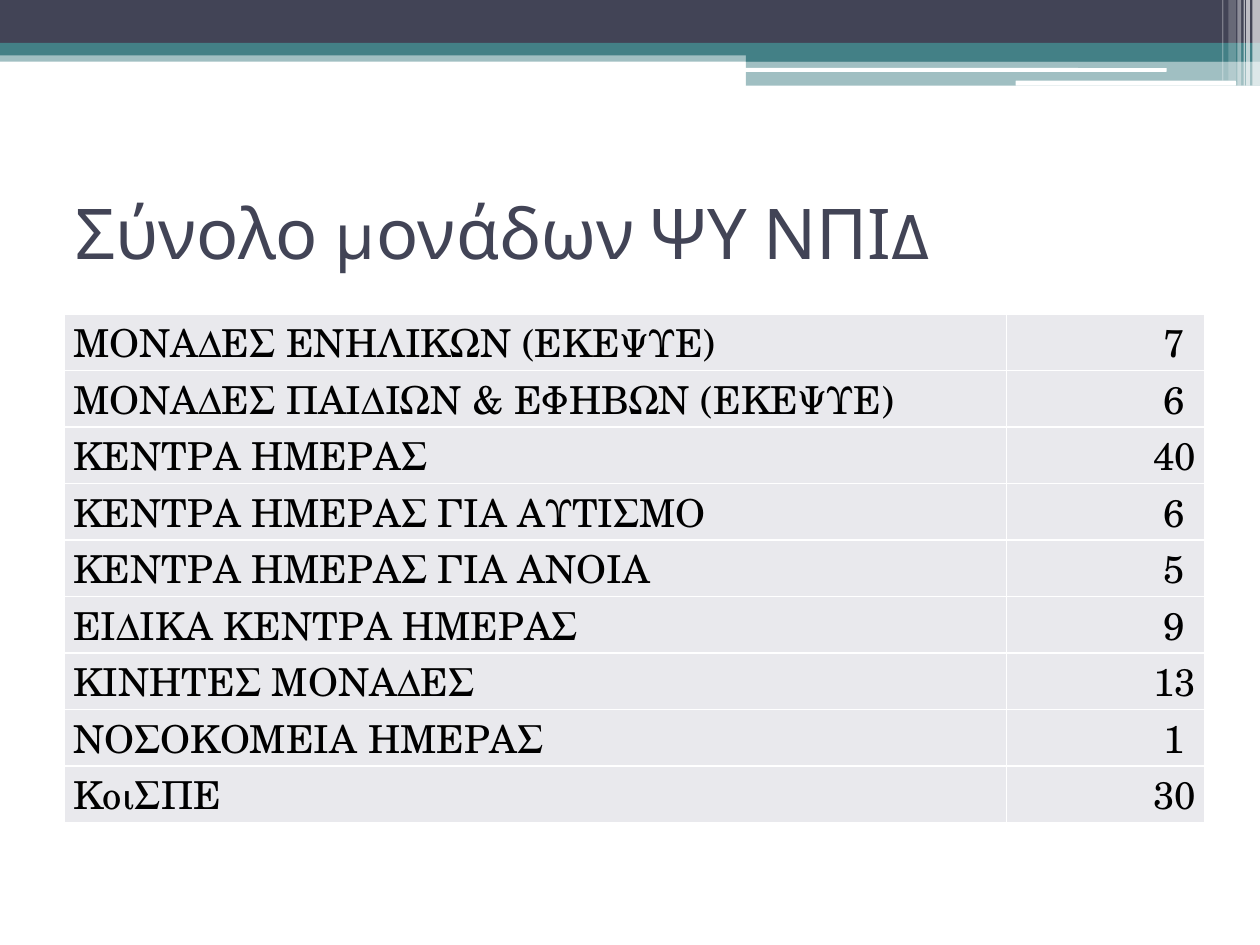
from typing import NamedTuple

from lxml import etree
from pptx import Presentation
from pptx.dml.color import RGBColor
from pptx.enum import shapes, text
from pptx.oxml import ns
from pptx.util import Inches, Pt

NAVY, TEAL, WHITE, BLACK, PALE = "424456", "438086", "FFFFFF", "000000", "E9E9ED"
TITLE_FONT, TABLE_FONT = "Karla", "TeX Gyre Schola"


class Band(NamedTuple):
    left: float
    top: float
    width: float
    height: float
    color: str
    opacity: int = 100
    rounded: bool = False


class Unit(NamedTuple):
    name: str
    count: str


BANDS = [
    Band(0, 0.4, 10, 0.09, TEAL, 50),
    Band(0, 0, 10, 0.34, NAVY),
    Band(0, 0.34, 10, 0.1, TEAL),
    Band(5.92, 0.39, 4.08, 0.1, TEAL),
    Band(5.92, 0.48, 4.08, 0.2, TEAL, 50),
    Band(5.91, 0.54, 3.35, 0.03, WHITE, rounded=True),
    Band(8.06, 0.64, 1.75, 0.04, WHITE, rounded=True),
    # Translucent stripes at the right edge
    Band(9.94, 0, 0.06, 0.68, WHITE, 65),
    Band(9.89, 0, 0.03, 0.68, WHITE, 65),
    Band(9.87, 0, 0.01, 0.68, WHITE, 60),
    Band(9.82, 0, 0.03, 0.68, WHITE, 40),
    Band(9.75, 0, 0.06, 0.64, WHITE, 20),
    Band(9.7, 0, 0.01, 0.64, WHITE, 30),
]

UNITS = [
    Unit("ΜΟΝΑΔΕΣ ΕΝΗΛΙΚΩΝ (ΕΚΕΨΥΕ)", "7 "),
    Unit("ΜΟΝΑΔΕΣ ΠΑΙΔΙΩΝ & ΕΦΗΒΩΝ (ΕΚΕΨΥΕ)", "6 "),
    Unit("ΚΕΝΤΡΑ ΗΜΕΡΑΣ", "40"),
    Unit("ΚΕΝΤΡΑ ΗΜΕΡΑΣ ΓΙΑ ΑΥΤΙΣΜΟ", "6 "),
    Unit("ΚΕΝΤΡΑ ΗΜΕΡΑΣ ΓΙΑ ΑΝΟΙΑ", "5 "),
    Unit("ΕΙΔΙΚΑ ΚΕΝΤΡΑ ΗΜΕΡΑΣ", "9 "),
    Unit("ΚΙΝΗΤΕΣ ΜΟΝΑΔΕΣ", "13"),
    Unit("ΝΟΣΟΚΟΜΕΙΑ ΗΜΕΡΑΣ", "1 "),
    Unit("ΚοιΣΠΕ", "30"),
]


def set_fill(target, color: str, opacity: int = 100) -> None:
    target.fill.solid()
    target.fill.fore_color.rgb = RGBColor.from_string(color)
    if opacity < 100:
        for rgb in target._element.spPr.iter(ns.qn("a:srgbClr")):
            etree.SubElement(rgb, ns.qn("a:alpha"), val=str(opacity * 1000))


def write(frame, words: str, *, size: float, font: str, color: str,
          align=text.PP_ALIGN.LEFT) -> None:
    paragraph = frame.paragraphs[0]
    paragraph.alignment = align
    run = paragraph.add_run()
    run.text = words
    run.font.size = Pt(size)
    run.font.name = font
    run.font.color.rgb = RGBColor.from_string(color)


def draw_band(slide, band: Band) -> None:
    kind = shapes.MSO_SHAPE.ROUNDED_RECTANGLE if band.rounded else shapes.MSO_SHAPE.RECTANGLE
    bar = slide.shapes.add_shape(kind, *map(Inches, band[:4]))
    bar.shadow.inherit = False
    bar.line.fill.background()
    set_fill(bar, band.color, band.opacity)


def add_borders(cell, color: str, width: float) -> None:
    properties = cell._tc.get_or_add_tcPr()
    # Borders come before the fill in the cell properties
    for position, side in enumerate(("lnL", "lnR", "lnT", "lnB")):
        line = etree.Element(ns.qn(f"a:{side}"), w=str(Pt(width)))
        solid = etree.SubElement(line, ns.qn("a:solidFill"))
        etree.SubElement(solid, ns.qn("a:srgbClr"), val=color)
        properties.insert(position, line)


def fill_cell(cell, words: str, align) -> None:
    cell.margin_left = cell.margin_right = Inches(0.07)
    cell.margin_top = cell.margin_bottom = 0
    set_fill(cell, PALE)
    add_borders(cell, WHITE, 1)
    write(cell.text_frame, words, size=22, font=TABLE_FONT, color=BLACK, align=align)


def draw_units(slide, units: list[Unit]) -> None:
    row_height = 0.39
    table = slide.shapes.add_table(
        len(units), 2, Inches(0.51), Inches(2.49),
        Inches(9.05), Inches(row_height * len(units))).table
    table.first_row = table.horz_banding = False
    for column, width in zip(table.columns, (7.48, 1.57)):
        column.width = Inches(width)
    for row, unit in enumerate(units):
        fill_cell(table.cell(row, 0), unit.name, text.PP_ALIGN.LEFT)
        fill_cell(table.cell(row, 1), unit.count, text.PP_ALIGN.RIGHT)


def main() -> None:
    deck = Presentation()
    deck.slide_width, deck.slide_height = Inches(10), Inches(7.5)
    slide = deck.slides.add_slide(deck.slide_layouts[5])

    # Header decoration
    for band in BANDS:
        draw_band(slide, band)

    # Title
    title = slide.shapes.title
    title.left, title.top, title.width, title.height = map(Inches, (0.5, 1.25, 9, 1.17))
    title.text_frame.vertical_anchor = text.MSO_ANCHOR.MIDDLE
    write(title.text_frame, "Σύνολο μονάδων ΨΥ ΝΠΙΔ", size=40, font=TITLE_FONT, color=NAVY)

    # Table of units
    draw_units(slide, UNITS)
    deck.save("out.pptx")


if __name__ == "__main__":
    main()
